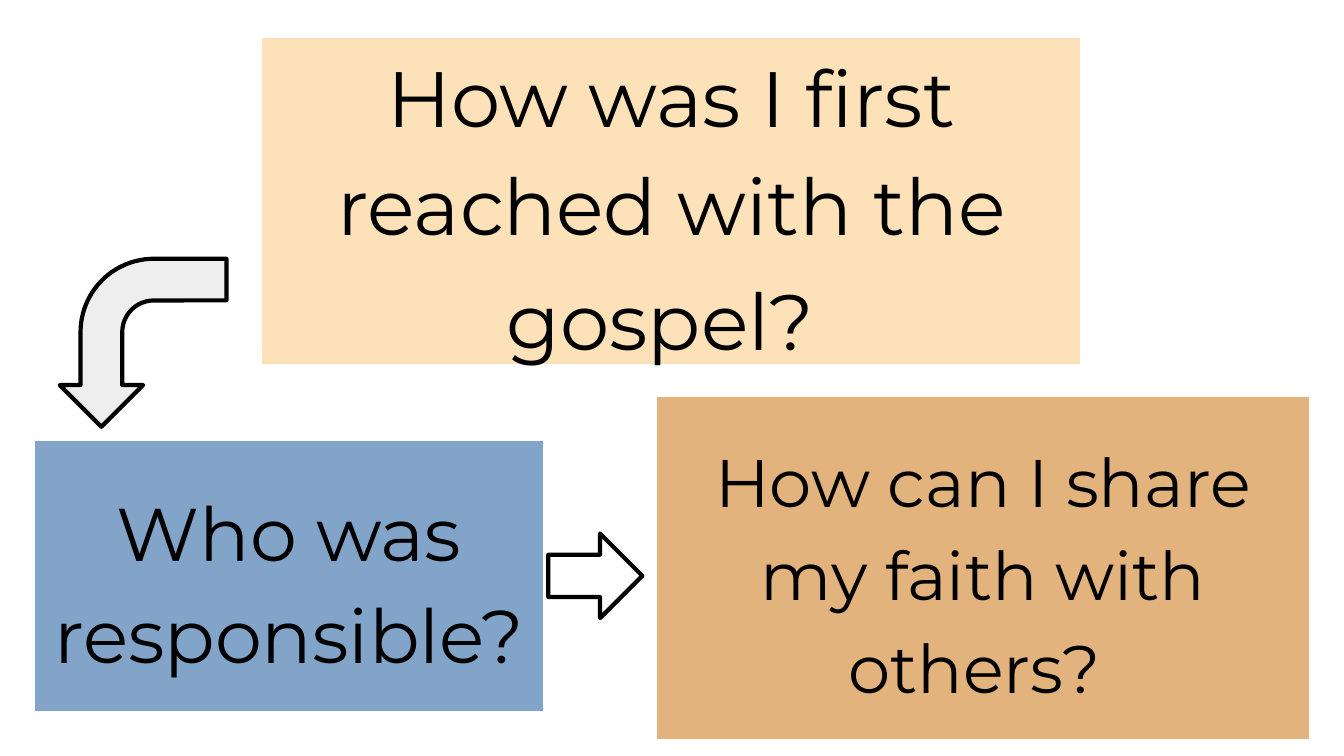
import pptx
import pptx.util
import pptx.dml.color
import pptx.enum.shapes
import pptx.enum.text

Inches = pptx.util.Inches
Pt = pptx.util.Pt
SHAPES = pptx.enum.shapes.MSO_SHAPE

COLORS = {
    "cream": "FDE2B9",
    "blue": "81A4C8",
    "tan": "E2B37C",
    "grey": "EEEEEE",
    "white": "FFFFFF",
    "black": "000000",
}
FRAME_FORMAT = {
    "word_wrap": True,
    "auto_size": pptx.enum.text.MSO_AUTO_SIZE.NONE,
    "vertical_anchor": pptx.enum.text.MSO_ANCHOR.MIDDLE,
    "margin_left": Inches(0.1),
    "margin_top": Inches(0.1),
    "margin_right": Inches(0.1),
    "margin_bottom": Inches(0.1),
}
PARAGRAPH_FORMAT = {
    "alignment": pptx.enum.text.PP_ALIGN.CENTER,
    "line_spacing": 1.15,
    "space_before": Pt(0),
    "space_after": Pt(0),
}


def set_all(target, values):
    for name, value in values.items():
        setattr(target, name, value)


def rgb(color):
    return pptx.dml.color.RGBColor.from_string(COLORS[color])


def place(part, box):
    names = ("left", "top", "width", "height")
    set_all(part, dict(zip(names, map(Inches, box))))


def paint(part, fill, line, weight):
    part.fill.solid()
    part.fill.fore_color.rgb = rgb(fill)
    part.line.color.rgb = rgb(line)
    part.line.width = Pt(weight)


def format_question(panel, box, pieces, fill):
    place(panel, box)
    paint(panel, fill, "white", 6)
    set_all(panel.text_frame, FRAME_FORMAT)
    paragraph = panel.text_frame.paragraphs[0]
    set_all(paragraph, PARAGRAPH_FORMAT)
    for wording, size in pieces:
        run = paragraph.add_run()
        run.text = wording
        set_all(run.font, {"name": "Montserrat", "size": Pt(size), "bold": False})
        run.font.color.rgb = rgb("black")


def add_question(slide, box, pieces, fill):
    panel = slide.shapes.add_shape(SHAPES.RECTANGLE, *map(Inches, box))
    panel.shadow.inherit = False
    format_question(panel, box, pieces, fill)


def add_arrow(slide, kind, box, fill, adjustments):
    arrow = slide.shapes.add_shape(kind, *map(Inches, box))
    arrow.shadow.inherit = False
    paint(arrow, fill, "black", 2.25)
    for index, value in enumerate(adjustments):
        arrow.adjustments[index] = value
    return arrow


def build_flow(slide):
    format_question(slide.shapes.title, (1.91, 0.24, 6.17, 2.51),
                    [("How was I first reached with the gospel?", 42), (" ", 45)],
                    "cream")
    add_question(slide, (0.22, 3.24, 3.86, 2.09),
                 [("Who was responsible?", 40)], "blue")
    add_question(slide, (4.85, 2.91, 4.93, 2.63),
                 [("How can I share my faith with others? ", 36)], "tan")
    turn = add_arrow(slide, SHAPES.BENT_ARROW, (0.44, 1.93, 1.25, 1.24),
                     "grey", (0.25, 0.25, 0.25, 0.44))
    turn.rotation = 270
    turn._element.spPr.xfrm.set("flipH", "1")
    add_arrow(slide, SHAPES.RIGHT_ARROW, (4.08, 3.97, 0.7, 0.63),
              "white", (0.5, 0.5))


def main():
    deck = pptx.Presentation()
    deck.slide_width = Inches(10)
    deck.slide_height = deck.slide_width * 9 // 16
    slide = deck.slides.add_slide(deck.slide_layouts.get_by_name("Title Only"))
    build_flow(slide)
    deck.save("out.pptx")


if __name__ == "__main__":
    main()
